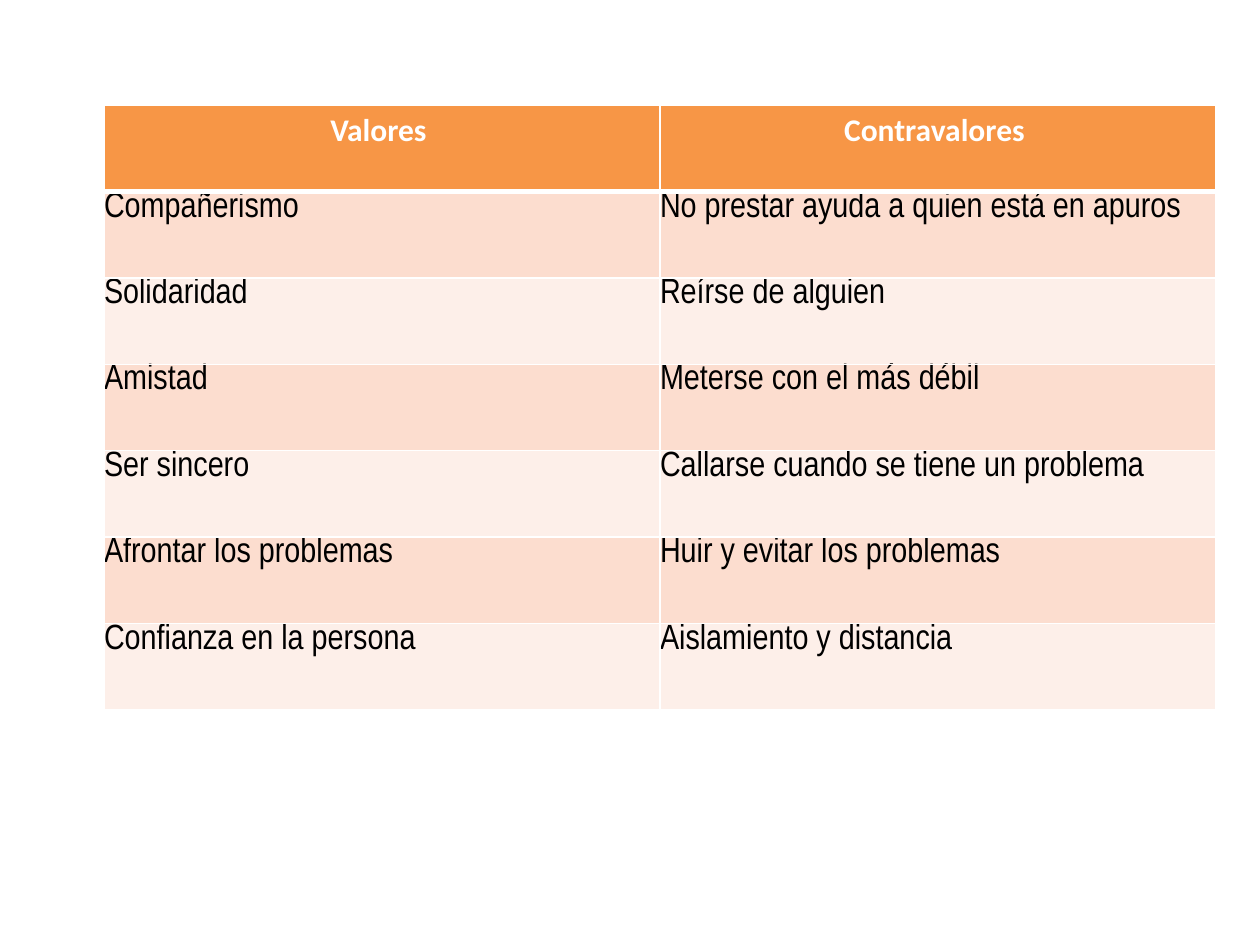
"""Build a slide with a two-column table of values and countervalues."""
from dataclasses import dataclass

from lxml import etree
from pptx import Presentation
from pptx.dml.color import RGBColor
from pptx.enum.text import PP_ALIGN
from pptx.oxml.ns import qn
from pptx.util import Pt

CENTER = PP_ALIGN.CENTER
JUSTIFY = PP_ALIGN.JUSTIFY
EMU_PER_PX = 914400 / 126
EMU_PER_POINT = 12700
COLORS = {
    "white": "FFFFFF",
    "black": "000000",
    "orange": "F79646",
    "peach": "FCDDCF",
    "cream": "FDEFE9",
}
ROWS = [
    ("Valores ", "Contravalores "),
    ("Compañerismo", "No prestar ayuda a quien está en apuros"),
    ("Solidaridad", "Reírse de alguien"),
    ("Amistad", "Meterse con el más débil"),
    ("Ser sincero", "Callarse cuando se tiene un problema"),
    ("Afrontar los problemas", "Huir y evitar los problemas"),
    ("Confianza en la persona", "Aislamiento y distancia"),
]


@dataclass(frozen=True)
class CellStyle:
    fill: str
    font: str
    size: int
    color: str
    bold: bool
    align: PP_ALIGN
    inset: bool
    top_border: int = 1
    bottom_border: int = 1


HEADER = CellStyle("orange", "Calibri", 18, "white", True, CENTER, True, bottom_border=3)


def px(length: int) -> int:
    return round(length * EMU_PER_PX)


def body_style(row: int) -> CellStyle:
    fill = "peach" if row % 2 else "cream"
    top_border = 3 if row == 1 else 1
    return CellStyle(fill, "Arial Narrow", 20, "black", False, JUSTIFY, False, top_border)


def add_borders(cell, style: CellStyle) -> None:
    properties = cell._tc.get_or_add_tcPr()
    widths = {"lnL": 1, "lnR": 1, "lnT": style.top_border, "lnB": style.bottom_border}
    for position, (side, points) in enumerate(widths.items()):
        line = etree.Element(qn(f"a:{side}"), w=str(points * EMU_PER_POINT))
        fill = etree.SubElement(line, qn("a:solidFill"))
        etree.SubElement(fill, qn("a:srgbClr"), val=COLORS["white"])
        properties.insert(position, line)


def fill_cell(cell, text: str, style: CellStyle) -> None:
    cell.fill.solid()
    cell.fill.fore_color.rgb = RGBColor.from_string(COLORS[style.fill])
    if not style.inset:
        cell.margin_left = cell.margin_top = cell.margin_right = cell.margin_bottom = 0
    add_borders(cell, style)
    para = cell.text_frame.paragraphs[0]
    para.text = text
    para.alignment = style.align
    font = para.runs[0].font
    font.name = style.font
    font.size = Pt(style.size)
    font.bold = style.bold
    font.color.rgb = RGBColor.from_string(COLORS[style.color])


def add_values_table(page) -> None:
    frame = page.shapes.add_table(
        len(ROWS), len(ROWS[0]), px(104), px(105), px(1112), px(605)
    )
    for row, texts in enumerate(ROWS):
        style = body_style(row) if row else HEADER
        for column, text in enumerate(texts):
            fill_cell(frame.table.cell(row, column), text, style)


def main() -> None:
    deck = Presentation()
    deck.slide_width = px(1260)
    deck.slide_height = px(945)
    page = deck.slides.add_slide(deck.slide_layouts[6])
    add_values_table(page)
    deck.save("out.pptx")


if __name__ == "__main__":
    main()
